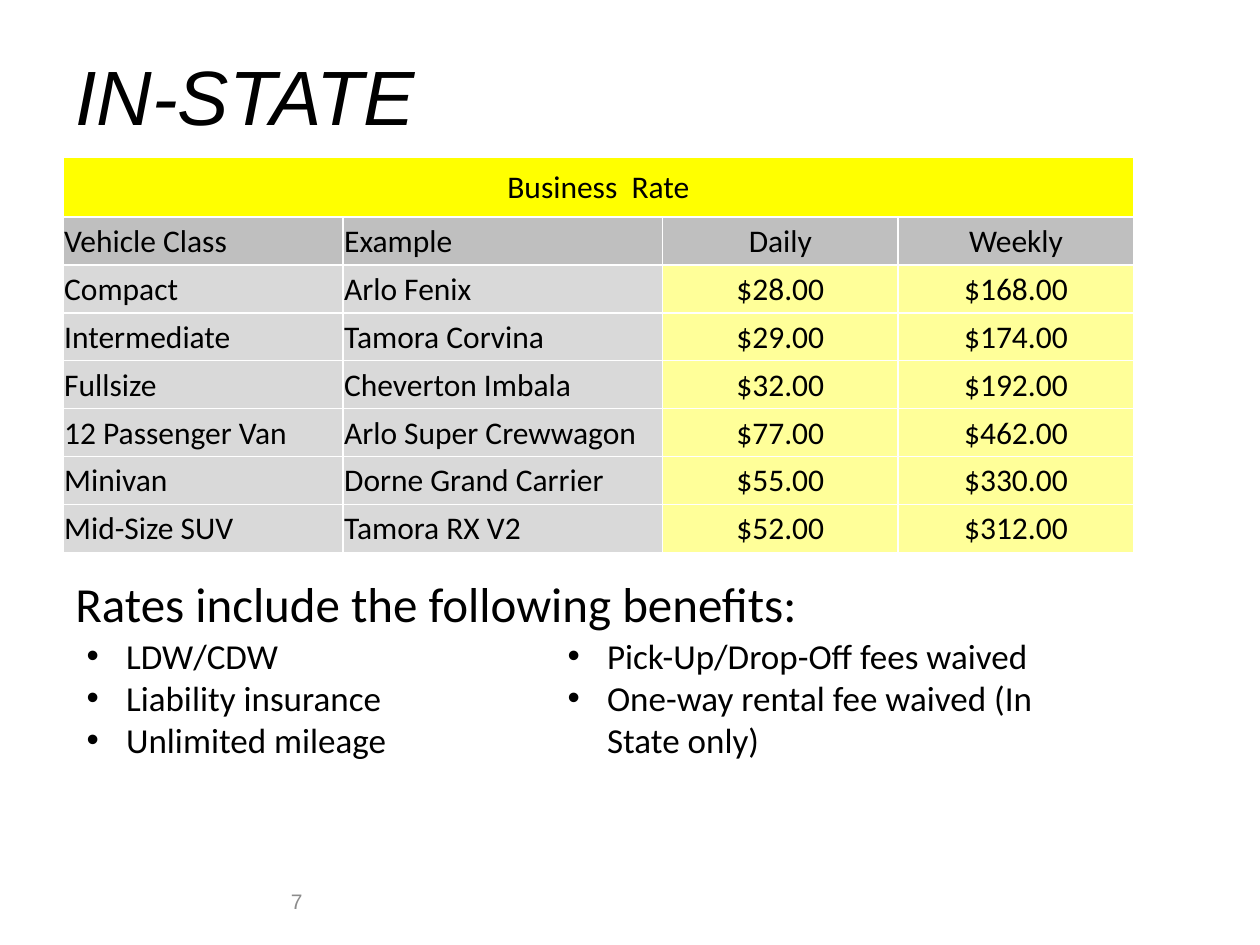
"""Build the in-state vehicle rental rates slide."""
from dataclasses import dataclass, field

from lxml import etree
from pptx import Presentation
from pptx.dml.color import RGBColor
from pptx.enum import text
from pptx.oxml import ns
from pptx.util import Pt

COLORS = {
    "ink": "000000",
    "number": "8C8C8C",
    "border": "FFFFFF",
    "banner": "FFFF00",
    "header": "BFBFBF",
    "vehicle": "D9D9D9",
    "rate": "FFFF99",
}

LEFT, CENTER, RIGHT = text.PP_ALIGN.LEFT, text.PP_ALIGN.CENTER, text.PP_ALIGN.RIGHT
TOP, MIDDLE = text.MSO_ANCHOR.TOP, text.MSO_ANCHOR.MIDDLE

HEADINGS = ["Vehicle Class", "Example", "Daily", "Weekly"]
RATES = [
    ["Compact", "Arlo Fenix", "$28.00", "$168.00"],
    ["Intermediate", "Tamora Corvina", "$29.00", "$174.00"],
    ["Fullsize", "Cheverton Imbala", "$32.00", "$192.00"],
    ["12 Passenger Van", "Arlo Super Crewwagon", "$77.00", "$462.00"],
    ["Minivan", "Dorne Grand Carrier", "$55.00", "$330.00"],
    ["Mid-Size SUV", "Tamora RX V2", "$52.00", "$312.00"],
]
BENEFITS = [
    "LDW/CDW",
    "Liability insurance",
    "Unlimited mileage",
    "Pick-Up/Drop-Off fees waived",
    "One-way rental fee waived (In State only)",
]


@dataclass
class Deck:
    """Hold the slide style and the slide being built."""

    slide: object
    font: str = "Calibri"
    title_font: str = "Arial"
    colors: dict = field(default_factory=lambda: COLORS)

    def color(self, name):
        """Return a named colour."""
        return RGBColor.from_string(self.colors[name])

    def run(self, p, words, size, font=None, color="ink", italic=None):
        """Add one styled run to a paragraph."""
        r = p.add_run()
        r.text = words
        r.font.size = Pt(size)
        r.font.name = font or self.font
        r.font.italic = italic
        r.font.color.rgb = self.color(color)

    def frame(self, box, anchor=TOP, wrap=True):
        """Add a text box and return its text frame."""
        sp = self.slide.shapes.add_textbox(*map(Pt, box))
        tf = sp.text_frame
        tf.word_wrap = wrap
        tf.vertical_anchor = anchor
        return tf

    def label(self, words, box, size, anchor=TOP, align=LEFT, wrap=True, **style):
        """Add a single line of text."""
        p = self.frame(box, anchor, wrap).paragraphs[0]
        p.alignment = align
        self.run(p, words, size, **style)

    def bullets(self, items, box, size, indent, columns):
        """Add a bulleted list that flows through columns."""
        tf = self.frame(box)
        body = tf._txBody.bodyPr
        body.set("numCol", str(columns))
        for i, item in enumerate(items):
            p = tf.add_paragraph() if i else tf.paragraphs[0]
            pPr = p._p.get_or_add_pPr()
            pPr.set("marL", str(Pt(indent)))
            pPr.set("indent", str(-Pt(indent)))
            etree.SubElement(pPr, ns.qn("a:buFont"), typeface="Arial")
            etree.SubElement(pPr, ns.qn("a:buChar"), char="•")
            self.run(p, item, size)

    def cell(self, cell, words, fill, align):
        """Style one table cell and write its text."""
        tcPr = cell._tc.get_or_add_tcPr()
        for side in ("lnL", "lnR", "lnT", "lnB"):
            ln = etree.SubElement(tcPr, ns.qn(f"a:{side}"), w=str(Pt(1)))
            solid = etree.SubElement(ln, ns.qn("a:solidFill"))
            etree.SubElement(solid, ns.qn("a:srgbClr"), val=self.colors["border"])
        cell.fill.solid()
        cell.fill.fore_color.rgb = self.color(fill)
        cell.margin_left = cell.margin_right = cell.margin_top = Pt(0.7)
        cell.margin_bottom = 0
        cell.vertical_anchor = MIDDLE
        p = cell.text_frame.paragraphs[0]
        p.alignment = align
        if words:
            self.run(p, words, 18)

    def table(self, banner, headings, rows, left, top, widths, heights):
        """Add a rate table under a merged banner row."""
        grid = [[banner] + [""] * (len(headings) - 1), headings, *rows]
        shape = self.slide.shapes.add_table(
            len(grid), len(headings), Pt(left), Pt(top),
            Pt(sum(widths)), Pt(sum(heights)))
        table = shape.table
        table.first_row = table.horz_banding = False
        for column, width in zip(table.columns, widths):
            column.width = Pt(width)
        for row, height in zip(table.rows, heights):
            row.height = Pt(height)
        for i, values in enumerate(grid):
            for j, words in enumerate(values):
                body_fill = "vehicle" if j < 2 else "rate"
                fill = ("banner", "header")[i] if i < 2 else body_fill
                align = CENTER if i == 0 or j > 1 else LEFT
                self.cell(table.cell(i, j), words, fill, align)
        table.cell(0, 0).merge(table.cell(0, len(headings) - 1))


def main():
    """Build and save the slide."""
    prs = Presentation()
    prs.slide_width, prs.slide_height = Pt(720), Pt(540)
    deck = Deck(prs.slides.add_slide(prs.slide_layouts[6]))
    deck.label("IN-STATE", (36, 21.6, 648, 65.5), 44, anchor=MIDDLE,
               font=deck.title_font, italic=True)
    deck.label("7", (149.8, 500.4, 30.2, 28.8), 12, anchor=MIDDLE, align=RIGHT,
               font=deck.title_font, color="number")
    deck.bullets(BENEFITS, (42.5, 359.3, 563.8, 90.7), 20, indent=22.5, columns=2)
    deck.label("Rates include the following benefits:", (36, 324, 431.3, 41),
               28, wrap=False)
    deck.table("Business  Rate", HEADINGS, RATES, 36, 90,
               [160, 182.6, 134.7, 134.7], [34] + [27.4] * 7)
    prs.save("out.pptx")


if __name__ == "__main__":
    main()
